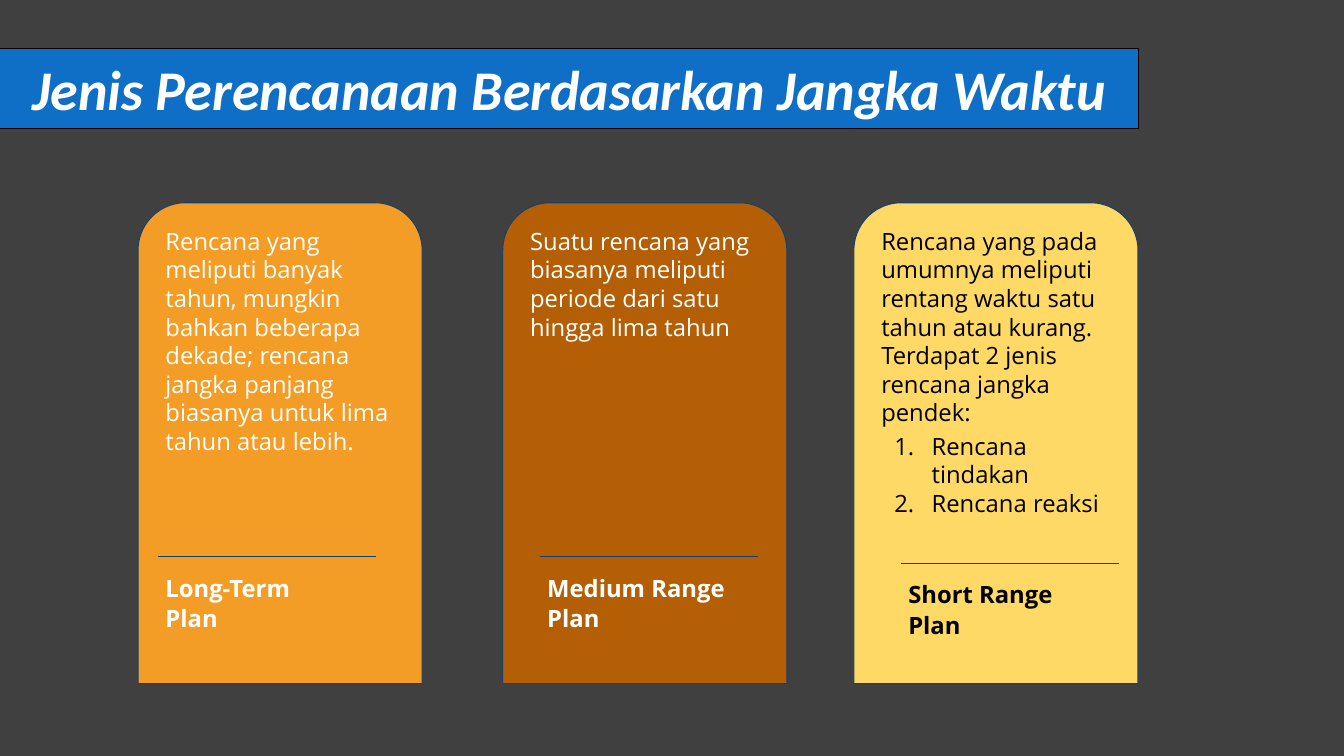
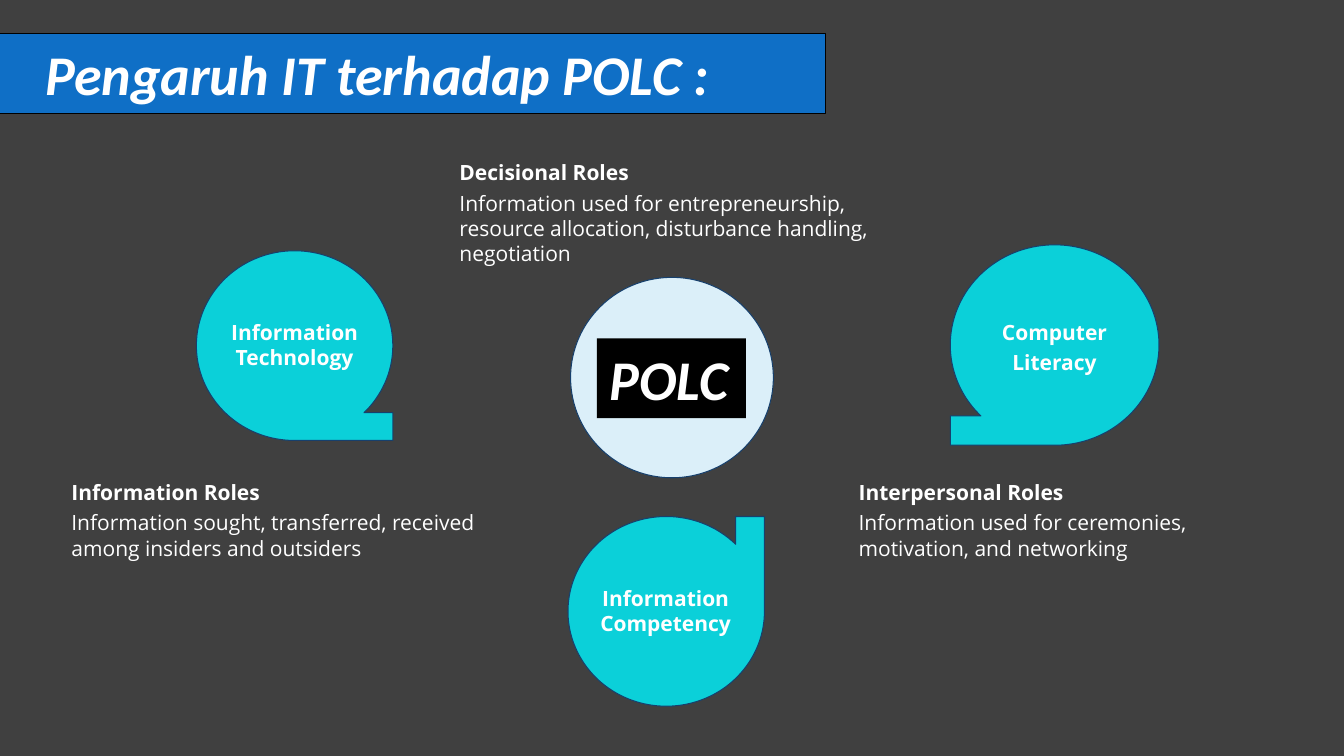
from dataclasses import dataclass

from lxml import etree
from pptx import Presentation, util as u
from pptx.dml.color import RGBColor
from pptx.enum import shapes, text
from pptx.oxml import ns
from pptx.shapes.autoshape import Shape
from pptx.slide import Slide
from pptx.text.text import TextFrame

WHITE, BLACK, GREY, BLUE, NAVY = "FFFFFF", "000000", "404040", "0F6FC6", "17406D"
TURQUOISE, PALE_BLUE = "0BD0D9", "DBEFF9"
HEADING = {"name": "Calibri", "size": u.Pt(40), "bold": True, "italic": True}
BODY = {"name": "Open Sans", "size": u.Pt(17), "bold": False}
BODY_BOLD = BODY | {"bold": True}
ROLE = BODY | {"size": u.Pt(15)}
ROLE_BOLD = ROLE | {"bold": True}
LEFT, CENTER = text.PP_ALIGN.LEFT, text.PP_ALIGN.CENTER
TIGHT_INSETS = (0.33, 0.15)
ROUND_INSETS = (0.25, 0.25)
BAND_LEFT, BAND_HEIGHT = -0.41, 2.01
CARD_TOP, CARD_WIDTH, CARD_HEIGHT = 5.11, 7.16, 12.12


@dataclass
class Box:
    """A rectangle in centimetres."""
    left: float
    top: float
    width: float
    height: float

    def lengths(self) -> list[u.Length]:
        return [u.Cm(value) for value in (self.left, self.top, self.width, self.height)]


@dataclass
class Line:
    """One paragraph with its format; space is the gap before it in points."""
    words: str
    style: dict
    color: str = WHITE
    space: float = 0
    spacing: float = 1.0
    align: text.PP_ALIGN = LEFT
    numbered: bool = False


@dataclass
class Card:
    left: float
    label_left: float
    label_top: float
    fill: str
    color: str
    description: str
    label: str
    items: tuple[str, ...] = ()


@dataclass
class Role:
    box: Box
    name: str
    description: str


@dataclass
class Tape:
    box: Box
    label_box: Box
    label: tuple[str, ...]
    rotation: int = 0
    flipped: bool = False


CARDS = [
    Card(3.48, 3.84, 14.38, "F39C26", WHITE,
         "Rencana yang meliputi banyak tahun, mungkin bahkan beberapa dekade; "
         "rencana jangka panjang biasanya untuk lima tahun atau lebih.", "Long-Term"),
    Card(12.67, 13.46, 14.38, "B45F06", WHITE,
         "Suatu rencana yang biasanya meliputi periode dari satu hingga lima tahun",
         "Medium Range"),
    Card(21.52, 22.56, 14.55, "FFD966", BLACK,
         "Rencana yang pada umumnya meliputi rentang waktu satu tahun atau kurang. "
         "Terdapat 2 jenis rencana jangka pendek:", "Short Range",
         ("Rencana tindakan", "Rencana reaksi")),
]
ROLES = [
    Role(Box(11.33, 3.78, 10.92, 3.2), "Decisional Roles",
         "Information used for entrepreneurship, resource allocation, "
         "disturbance handling, negotiation"),
    Role(Box(1.55, 11.84, 10.92, 2.57), "Information Roles",
         "Information sought, transferred, received among insiders and outsiders"),
    Role(Box(21.39, 11.84, 10.92, 2.57), "Interpersonal Roles",
         "Information used for ceremonies, motivation, and networking"),
]
TAPES = [
    Tape(Box(4.95, 6.32, 4.95, 4.78), Box(4.95, 7.8, 4.95, 1.8), ("Information Technology",)),
    Tape(Box(23.95, 6.17, 5.26, 5.05), Box(24.1, 7.8, 4.95, 1.93),
         ("Computer", "Literacy"), flipped=True),
    Tape(Box(14.4, 12.93, 4.78, 4.95), Box(14.3, 14.5, 4.95, 1.8),
         ("Information Competency",), rotation=270),
]


def rgb(color: str) -> RGBColor:
    return RGBColor.from_string(color)


def paint(shape: Shape, fill: str, line: str | None = NAVY) -> None:
    shape.fill.solid()
    shape.fill.fore_color.rgb = rgb(fill)
    if line:
        shape.line.color.rgb = rgb(line)
        shape.line.width = u.Pt(0.75)
    else:
        shape.line.fill.background()


def write(frame: TextFrame, lines: list[Line], insets: tuple[float, float] = TIGHT_INSETS,
          auto_size: text.MSO_AUTO_SIZE = text.MSO_AUTO_SIZE.NONE) -> None:
    across, down = (u.Cm(inset) for inset in insets)
    frame_format = {
        "word_wrap": True, "auto_size": auto_size, "vertical_anchor": text.MSO_ANCHOR.TOP,
        "margin_left": across, "margin_right": across, "margin_top": down, "margin_bottom": down,
    }
    for name, value in frame_format.items():
        setattr(frame, name, value)
    for index, line in enumerate(lines):
        paragraph = frame.add_paragraph() if index else frame.paragraphs[0]
        paragraph.text = line.words
        paragraph.alignment = line.align
        paragraph.line_spacing = line.spacing
        paragraph.space_before = u.Pt(line.space)
        if line.numbered:
            number(paragraph, line.color)
        for name, value in line.style.items():
            setattr(paragraph.font, name, value)
        paragraph.font.color.rgb = rgb(line.color)


def number(paragraph, color: str) -> None:
    """Give the paragraph a hanging 1., 2., ... number."""
    properties = paragraph._p.get_or_add_pPr()
    properties.set("marL", str(u.Cm(1.27)))
    properties.set("indent", str(u.Cm(-0.94)))
    bullet_color = etree.SubElement(properties, ns.qn("a:buClr"))
    etree.SubElement(bullet_color, ns.qn("a:srgbClr"), val=color)
    etree.SubElement(properties, ns.qn("a:buFont"), typeface=BODY["name"])
    etree.SubElement(properties, ns.qn("a:buAutoNum"), type="arabicPeriod")


def add_shape(slide: Slide, kind: shapes.MSO_SHAPE, box: Box, fill: str,
              line: str | None = NAVY) -> Shape:
    shape = slide.shapes.add_shape(kind, *box.lengths())
    shape.shadow.inherit = False
    paint(shape, fill, line)
    return shape


def add_text(slide: Slide, box: Box, lines: list[Line], **layout) -> None:
    write(slide.shapes.add_textbox(*box.lengths()).text_frame, lines, **layout)


def add_growing_text(slide: Slide, box: Box, lines: list[Line]) -> None:
    add_text(slide, box, lines, insets=ROUND_INSETS,
             auto_size=text.MSO_AUTO_SIZE.SHAPE_TO_FIT_TEXT)


def add_titled_slide(presentation, title: str, top: float, width: float, indent: float) -> Slide:
    """Add a slide whose title is a blue band running in from the left edge."""
    slide = presentation.slides.add_slide(presentation.slide_layouts[5])
    band = slide.shapes.title
    box = Box(BAND_LEFT, top, width, BAND_HEIGHT)
    for name, value in zip(("left", "top", "width", "height"), box.lengths()):
        setattr(band, name, value)
    paint(band, BLUE, BLACK)
    write(band.text_frame, [Line(title, HEADING)])
    band.text_frame.margin_left = u.Cm(indent)
    return slide


def add_card(slide: Slide, card: Card) -> None:
    panel = add_shape(slide, shapes.MSO_SHAPE.ROUND_2_SAME_RECTANGLE,
                      Box(card.left, CARD_TOP, CARD_WIDTH, CARD_HEIGHT), card.fill)
    panel.adjustments[0] = 0.167
    items = [Line(item, BODY, card.color, space=0 if index else 3.6, numbered=True)
             for index, item in enumerate(card.items)]
    add_text(slide, Box(card.left + 0.36, 5.56, 6.48, 8.1),
             [Line(card.description, BODY, card.color), *items])
    add_text(slide, Box(card.label_left, card.label_top, 5.21, 2.01),
             [Line(card.label, BODY_BOLD, card.color, spacing=0.9),
              Line("Plan", BODY_BOLD, card.color, space=3.6, spacing=0.9)])
    rule_left, rule_top = card.label_left + 0.15, card.label_top - 0.36
    rule = slide.shapes.add_connector(
        shapes.MSO_CONNECTOR.STRAIGHT, u.Cm(rule_left), u.Cm(rule_top),
        u.Cm(rule_left + 5.49), u.Cm(rule_top))
    rule.line.color.rgb = rgb(NAVY)
    rule.line.width = u.Pt(0.75)
    etree.SubElement(rule.element.spPr, ns.qn("a:effectLst"))


def add_role(slide: Slide, role: Role) -> None:
    add_growing_text(slide, role.box, [Line(role.name, ROLE_BOLD),
                                       Line(role.description, ROLE, space=3.6)])


def add_tape(slide: Slide, tape: Tape) -> None:
    shape = add_shape(slide, shapes.MSO_SHAPE.FLOWCHART_SEQUENTIAL_ACCESS_STORAGE,
                      tape.box, TURQUOISE)
    shape.rotation = tape.rotation
    if tape.flipped:
        shape.element.spPr.find(ns.qn("a:xfrm")).set("flipH", "1")
    add_growing_text(slide, tape.label_box,
                     [Line(words, ROLE_BOLD, space=3.6 if index else 0, align=CENTER)
                      for index, words in enumerate(tape.label)])


def build_time_span_slide(presentation) -> None:
    slide = add_titled_slide(presentation, "Jenis Perencanaan Berdasarkan Jangka Waktu",
                             top=1.22, width=29.11, indent=1.22)
    for card in CARDS:
        add_card(slide, card)


def build_polc_slide(presentation) -> None:
    slide = add_titled_slide(presentation, "Pengaruh IT terhadap POLC :",
                             top=0.84, width=21.21, indent=1.55)
    add_shape(slide, shapes.MSO_SHAPE.OVAL, Box(14.38, 6.99, 5.11, 5.05), PALE_BLUE)
    center = add_shape(slide, shapes.MSO_SHAPE.RECTANGLE, Box(15.04, 8.53, 3.76, 2.01),
                       BLACK, line=None)
    write(center.text_frame, [Line("POLC", HEADING)])
    for role in ROLES:
        add_role(slide, role)
    for tape in TAPES:
        add_tape(slide, tape)


def main() -> None:
    presentation = Presentation()
    presentation.slide_width, presentation.slide_height = u.Cm(33.87), u.Cm(19.05)
    background = presentation.slide_master.background.fill
    background.solid()
    background.fore_color.rgb = rgb(GREY)
    build_time_span_slide(presentation)
    build_polc_slide(presentation)
    presentation.save("out.pptx")


if __name__ == "__main__":
    main()
